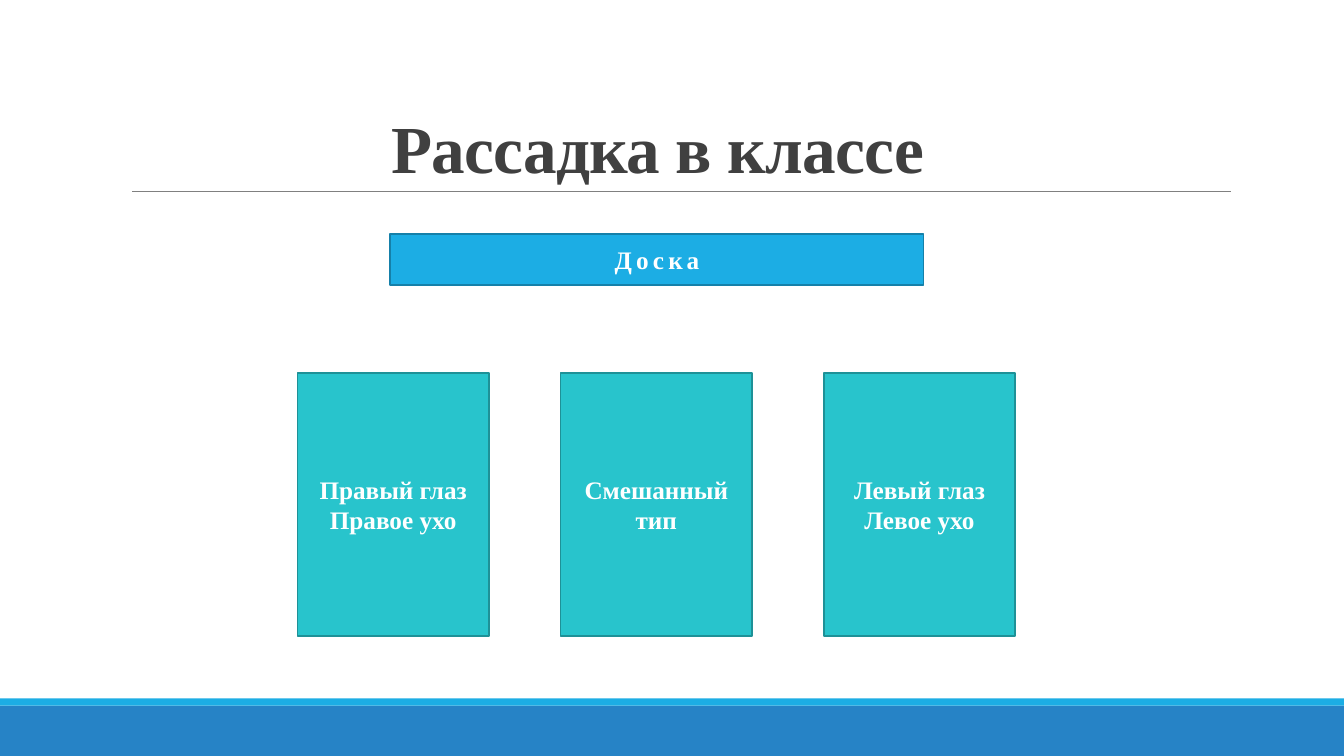
"""Build a slide with the seating plan of a classroom."""
from pptx import Presentation
from pptx.dml.color import RGBColor
from pptx.enum.shapes import MSO_CONNECTOR, MSO_SHAPE
from pptx.enum.text import MSO_ANCHOR, PP_ALIGN
from pptx.oxml.ns import qn
from pptx.util import Inches, Pt
from lxml.etree import SubElement

TITLE = "Рассадка в классе"
BOARD = "Доска"
SEAT_GROUPS = [
    ["Правый глаз", "Правое ухо"],
    ["Смешанный тип"],
    ["Левый глаз", "Левое ухо"],
]

FONT = "Times New Roman"
WHITE = RGBColor(0xFF, 0xFF, 0xFF)
DARK_GRAY = RGBColor(0x40, 0x40, 0x40)
GRAY = RGBColor(0x80, 0x80, 0x80)
BLUE = RGBColor(0x26, 0x83, 0xC6)
SKY = RGBColor(0x1C, 0xAD, 0xE4)
SKY_EDGE = RGBColor(0x15, 0x80, 0xA9)
TEAL = RGBColor(0x28, 0xC4, 0xCC)
TEAL_EDGE = RGBColor(0x1E, 0x91, 0x97)

SLIDE_WIDTH, SLIDE_HEIGHT = 13.33, 7.5
GROUP_LEFT, GROUP_TOP, GROUP_WIDTH, GROUP_HEIGHT = 2.95, 3.7, 1.9, 2.61
GROUP_STEP = 2.61


def add_rectangle(slide, left, top, width, height, fill, edge=None):
    shape = slide.shapes.add_shape(
        MSO_SHAPE.RECTANGLE, Inches(left), Inches(top), Inches(width), Inches(height))
    shape.shadow.inherit = False
    shape.fill.solid()
    shape.fill.fore_color.rgb = fill
    if edge is None:
        shape.line.fill.background()
    else:
        shape.line.color.rgb = edge
        shape.line.width = Pt(1.25)
    return shape


def write_lines(shape, lines, size, color, anchor=MSO_ANCHOR.MIDDLE, spacing=0):
    frame = shape.text_frame
    frame.word_wrap = True
    frame.vertical_anchor = anchor
    frame.text = "\n".join(lines)
    for paragraph in frame.paragraphs:
        paragraph.alignment = PP_ALIGN.CENTER
        paragraph.font.name = FONT
        paragraph.font.size = Pt(size)
        paragraph.font.bold = True
        paragraph.font.color.rgb = color
        if spacing:
            for run in paragraph.runs:
                run._r.get_or_add_rPr().set("spc", str(int(spacing * 100)))


def main():
    presentation = Presentation()
    presentation.slide_width = Inches(SLIDE_WIDTH)
    presentation.slide_height = Inches(SLIDE_HEIGHT)
    slide = presentation.slides.add_slide(presentation.slide_layouts[6])

    add_rectangle(slide, 0, 7, SLIDE_WIDTH, 0.5, BLUE)
    add_rectangle(slide, 0, 6.93, SLIDE_WIDTH, 0.07, SKY)

    rule = slide.shapes.add_connector(
        MSO_CONNECTOR.STRAIGHT, Inches(1.31), Inches(1.9), Inches(12.21), Inches(1.9))
    rule.line.color.rgb = GRAY
    rule.line.width = Pt(0.5)
    SubElement(rule._element.spPr, qn("a:effectLst"))

    title = slide.shapes.add_textbox(Inches(1.65), Inches(0.51), Inches(9.75), Inches(1.4))
    write_lines(title, [TITLE], 48, DARK_GRAY, MSO_ANCHOR.BOTTOM, -0.5)
    title.text_frame.paragraphs[0].line_spacing = 0.85

    for index, lines in enumerate(SEAT_GROUPS):
        group = add_rectangle(slide, GROUP_LEFT + index * GROUP_STEP, GROUP_TOP,
                              GROUP_WIDTH, GROUP_HEIGHT, TEAL, TEAL_EDGE)
        write_lines(group, lines, 18, WHITE)

    board = add_rectangle(slide, 3.87, 2.32, 5.29, 0.51, SKY, SKY_EDGE)
    write_lines(board, [BOARD], 18, WHITE, spacing=3)

    presentation.save("out.pptx")


if __name__ == "__main__":
    main()
